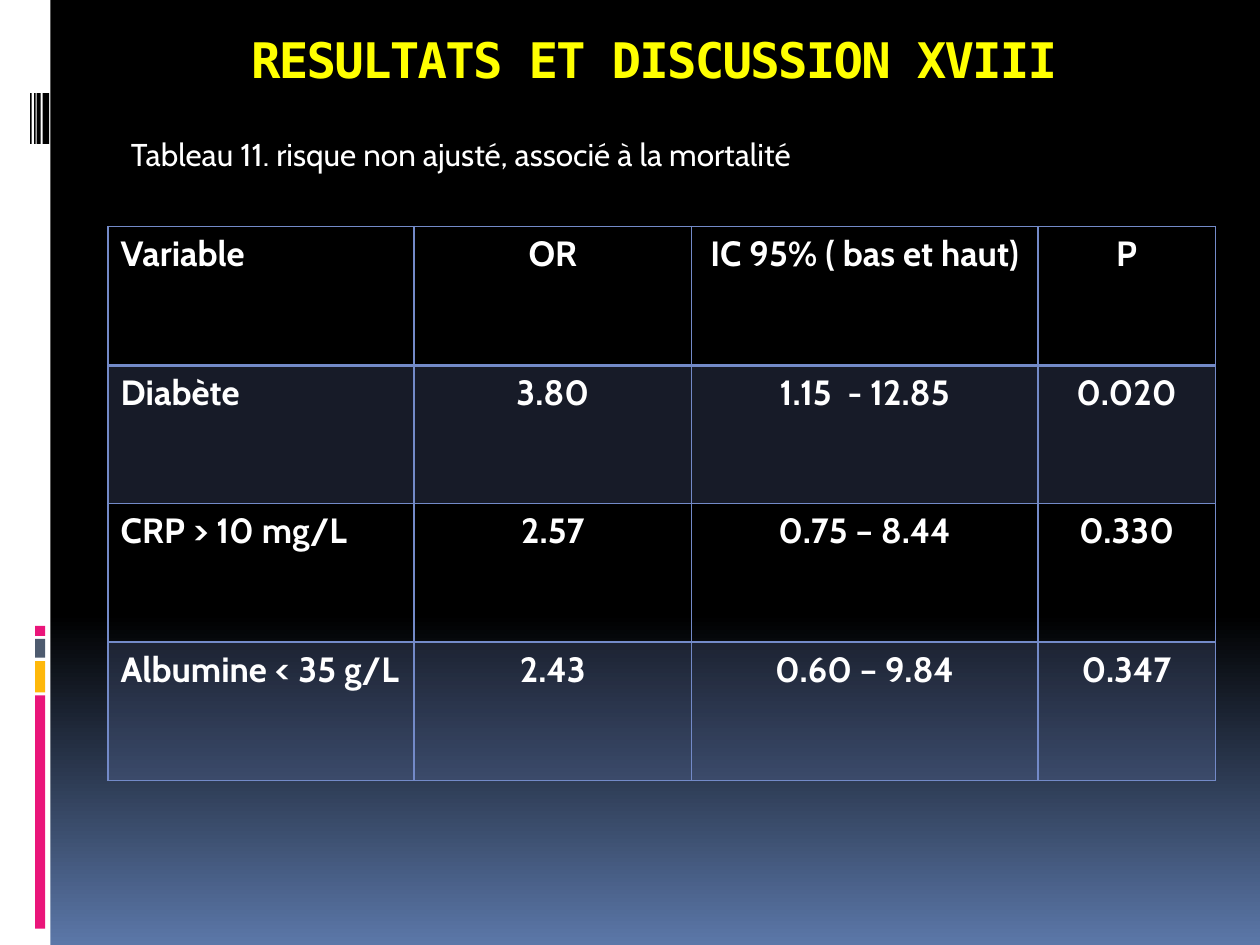
import pptx
import pptx.dml.color
import pptx.enum.shapes
import pptx.enum.text
import pptx.oxml
import pptx.oxml.ns
import pptx.util
from pptx.util import Cm, Pt

ACCENT = "738AC8"
WHITE = "FFFFFF"
ALIGN = pptx.enum.text.PP_ALIGN


def color(value):
    return pptx.dml.color.RGBColor.from_string(value)


def write(text_frame, text, font, size, value, bold=False, alignment=ALIGN.LEFT):
    paragraph = text_frame.paragraphs[0]
    paragraph.text = text
    paragraph.alignment = alignment
    paragraph.font.name = font
    paragraph.font.size = Pt(size)
    paragraph.font.bold = bold
    paragraph.font.color.rgb = color(value)
    return paragraph


presentation = pptx.Presentation()
presentation.slide_width = Cm(25.4)
presentation.slide_height = Cm(19.05)
slide = presentation.slides.add_slide(presentation.slide_layouts[6])

# Background: black down to 65 %, then fading to blue
background = slide.background.fill
background.gradient()
background.gradient_angle = 270
for stop, position, value in zip(background.gradient_stops, (0.65, 1), ("000000", "5B77A8")):
    stop.position = position
    stop.color.rgb = color(value)

# Side strip, colour blocks and black bars: left, top, width, height, fill
blocks = [(0, 0, 1.02, 19.05, WHITE)]
blocks += [
    (0.71, top, 0.2, height, value)
    for top, height, value in [
        (14.02, 4.7, "EA157A"),
        (13.33, 0.63, "FEB80A"),
        (12.88, 0.38, "4E5B6F"),
        (12.62, 0.2, "EA157A"),
    ]
]
blocks += [
    (left, 1.88, width, 1.02, "000000")
    for left, width in [(0.86, 0.13), (0.74, 0.08), (0.69, 0.03), (0.61, 0.03)]
]
for left, top, width, height, value in blocks:
    shape = slide.shapes.add_shape(
        pptx.enum.shapes.MSO_SHAPE.RECTANGLE, Cm(left), Cm(top), Cm(width), Cm(height)
    )
    shape.shadow.inherit = False
    shape.fill.solid()
    shape.fill.fore_color.rgb = color(value)
    shape.line.fill.background()

# Title and caption
title = slide.shapes.add_textbox(Cm(2.39), Cm(0.41), Cm(21.59), Cm(1.19)).text_frame
title.word_wrap = True
title.margin_top = Cm(0.18)
paragraph = write(title, "RESULTATS ET DISCUSSION XVIII", "DejaVu Sans Mono", 28,
                  "FFFF00", bold=True, alignment=ALIGN.CENTER)
paragraph.runs[0].font._element.set("spc", "-100")

caption = slide.shapes.add_textbox(Cm(2.39), Cm(2.59), Cm(15.67), Cm(1.02)).text_frame
caption.word_wrap = True
write(caption, "Tableau 11. risque non ajusté, associé à la mortalité", "Cabin", 18, WHITE)

# Risk table
rows = [
    ("Variable", "OR", "IC 95% ( bas et haut)", "P"),
    ("Diabète", "3.80", "1.15  - 12.85", "0.020"),
    ("CRP > 10 mg/L", "2.57", "0.75 – 8.44", "0.330"),
    ("Albumine < 35 g/L", "2.43", "0.60 – 9.84", "0.347"),
]
column_widths = (6.17, 5.59, 6.98, 3.58)
row_height = 2.79
table = slide.shapes.add_table(
    len(rows), len(column_widths), Cm(2.18), Cm(4.57),
    Cm(sum(column_widths)), Cm(row_height * len(rows)),
).table
table.horz_banding = False
for column, width in zip(table.columns, column_widths):
    column.width = Cm(width)

for row_index, texts in enumerate(rows):
    table.rows[row_index].height = Cm(row_height)
    for column_index, text in enumerate(texts):
        cell = table.cell(row_index, column_index)
        write(cell.text_frame, text, "Cabin", 20, WHITE, bold=True,
              alignment=ALIGN.CENTER if column_index else ALIGN.LEFT)

        properties = cell._tc.get_or_add_tcPr()
        for side in "LRTB":
            # The rule under the header row is twice as thick
            under_header = (row_index, side) in ((0, "B"), (1, "T"))
            properties.append(pptx.oxml.parse_xml(
                f'<a:ln{side} {pptx.oxml.ns.nsdecls("a")} w="{Pt(2 if under_header else 1)}">'
                f'<a:solidFill><a:srgbClr val="{ACCENT}"/></a:solidFill></a:ln{side}>'
            ))

        if row_index % 2:
            cell.fill.solid()
            cell.fill.fore_color.rgb = color(ACCENT)
            fill_color = properties.find(pptx.oxml.ns.qn("a:solidFill"))[0]
            fill_color.append(pptx.oxml.parse_xml(
                f'<a:alpha {pptx.oxml.ns.nsdecls("a")} val="20000"/>'
            ))
        else:
            cell.fill.background()

presentation.save("out.pptx")
